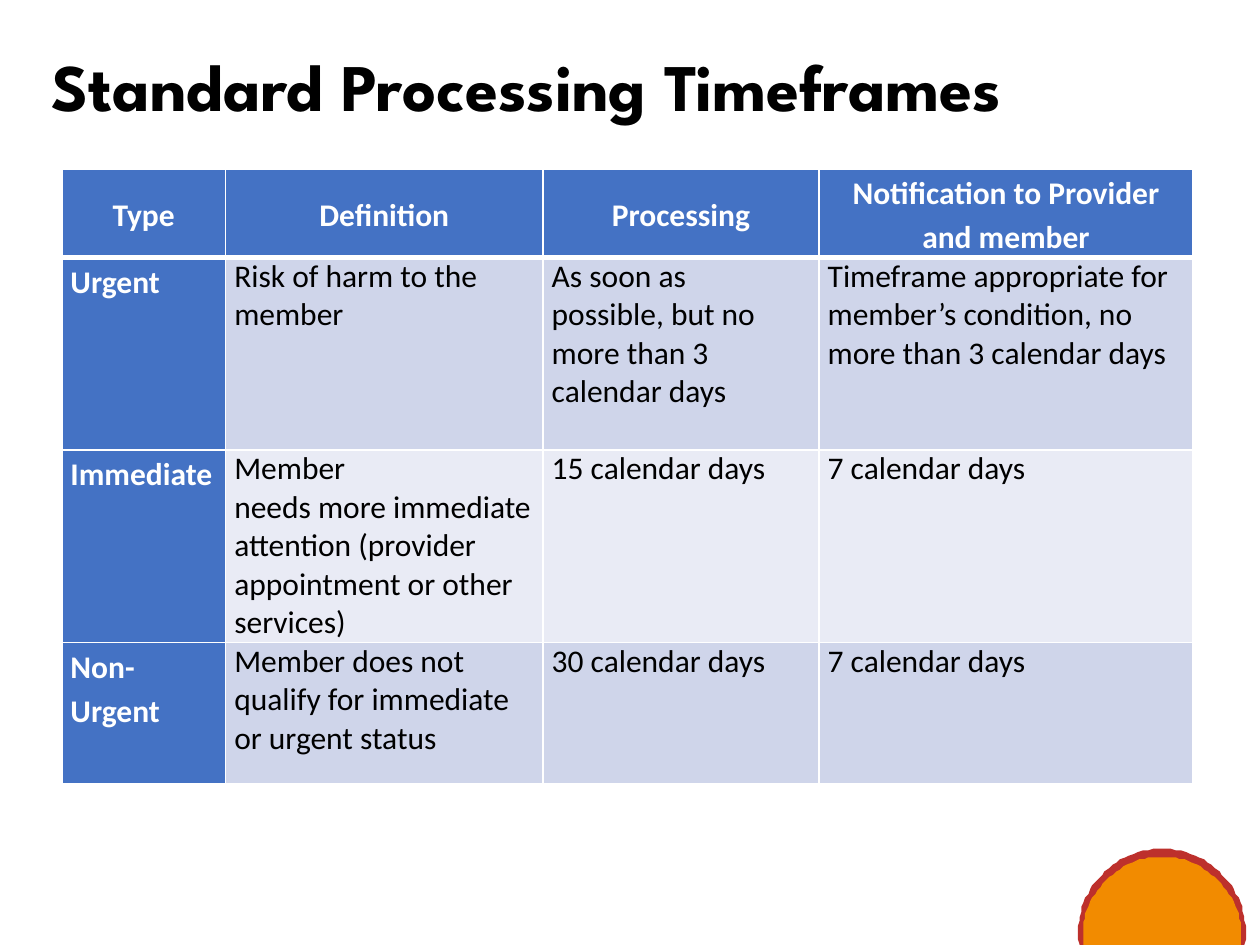
import math

from lxml import etree
from pptx import Presentation, util as u
from pptx.dml.color import RGBColor
from pptx.enum import text
from pptx.oxml import ns

COLORS = {
    "white": "FFFFFF",
    "black": "000000",
    "blue": "4472C4",
    "band": "CFD5EA",
    "pale": "E9EBF5",
    "orange": "F28B00",
    "red": "BD302C",
}


def add_run(para, words, font, size, color, bold):
    span = para.add_run()
    span.text = words
    span.font.name = font
    span.font.size = u.Pt(size)
    span.font.bold = bold
    span.font.color.rgb = RGBColor.from_string(COLORS[color])


def add_borders(cell, bottom):
    props = cell._tc.get_or_add_tcPr()
    widths = {"a:lnL": 1, "a:lnR": 1, "a:lnT": 1, "a:lnB": bottom}
    for index, (tag, width) in enumerate(widths.items()):
        line = etree.Element(ns.qn(tag), w=str(u.Pt(width)))
        fill = etree.SubElement(line, ns.qn("a:solidFill"))
        etree.SubElement(fill, ns.qn("a:srgbClr"), val=COLORS["white"])
        props.insert(index, line)


deck = Presentation()
deck.slide_width, deck.slide_height = u.Pt(720), u.Pt(540)
page = deck.slides.add_slide(deck.slide_layouts[5])

center_x = 664
for color, center_y, radius in [("red", 532.8, 47.9), ("orange", 535, 45.3)]:
    dip = math.asin((540 - center_y) / radius)
    angles = [math.pi - dip + (math.pi + 2 * dip) * step / 60 for step in range(61)]
    points = [
        (center_x + radius * math.cos(angle), center_y + radius * math.sin(angle))
        for angle in angles
    ]
    builder = page.shapes.build_freeform(*points[0], scale=u.Pt(1))
    builder.add_line_segments(points[1:], close=True)
    dome = builder.convert_to_shape()
    dome.shadow.inherit = False
    dome.fill.solid()
    dome.fill.fore_color.rgb = RGBColor.from_string(COLORS[color])
    dome.line.fill.background()

title = page.shapes.title
title.left, title.top, title.width, title.height = u.Pt(22.3), u.Pt(26.6), u.Pt(633.6), u.Pt(49.7)
title.text_frame.vertical_anchor = text.MSO_ANCHOR.MIDDLE
para = title.text_frame.paragraphs[0]
para.alignment = text.PP_ALIGN.LEFT
para.line_spacing = 0.9
add_run(para, "Standard Processing Timeframes", "League Spartan", 38, "black", True)

rows = [
    [["Type"], ["Definition"], ["Processing"], ["Notification to Provider and member"]],
    [
        ["Urgent"],
        ["Risk of harm to the member"],
        ["As soon as", "possible, but no more than 3 calendar days"],
        ["Timeframe appropriate for member’s condition, no more than 3 calendar days"],
    ],
    [
        ["Immediate"],
        ["Member", "needs more immediate attention (provider appointment or other services)"],
        ["15 calendar days"],
        ["7 calendar days"],
    ],
    [
        ["Non-Urgent"],
        ["Member does not qualify for immediate or urgent status"],
        ["30 calendar days"],
        ["7 calendar days"],
    ],
]
column_widths = [93.6, 181.4, 157.7, 213.8]
row_heights = [50.4, 110, 110, 81]
row_fills = ["blue", "band", "pale", "band"]

table = page.shapes.add_table(
    len(rows), len(column_widths), u.Pt(35.3), u.Pt(96.5),
    u.Pt(sum(column_widths)), u.Pt(sum(row_heights)),
).table
for column, width in zip(table.columns, column_widths):
    column.width = u.Pt(width)
for row, height in zip(table.rows, row_heights):
    row.height = u.Pt(height)

for row_index, row in enumerate(rows):
    for column_index, lines in enumerate(row):
        cell = table.cell(row_index, column_index)
        header = row_index == 0
        heading = header or column_index == 0
        cell.margin_left = cell.margin_right = u.Pt(5)
        cell.margin_top = cell.margin_bottom = u.Pt(0)
        cell.vertical_anchor = text.MSO_ANCHOR.MIDDLE if header else text.MSO_ANCHOR.TOP
        cell.fill.solid()
        fill = "blue" if heading else row_fills[row_index]
        cell.fill.fore_color.rgb = RGBColor.from_string(COLORS[fill])
        add_borders(cell, 3 if header else 1)
        for line_index, words in enumerate(lines):
            frame = cell.text_frame
            para = frame.add_paragraph() if line_index else frame.paragraphs[0]
            para.alignment = text.PP_ALIGN.CENTER if header else text.PP_ALIGN.LEFT
            para.line_spacing = 1.15 if heading else 1.0
            add_run(para, words, "Calibri", 18, "white" if heading else "black", heading)

deck.save("out.pptx")
